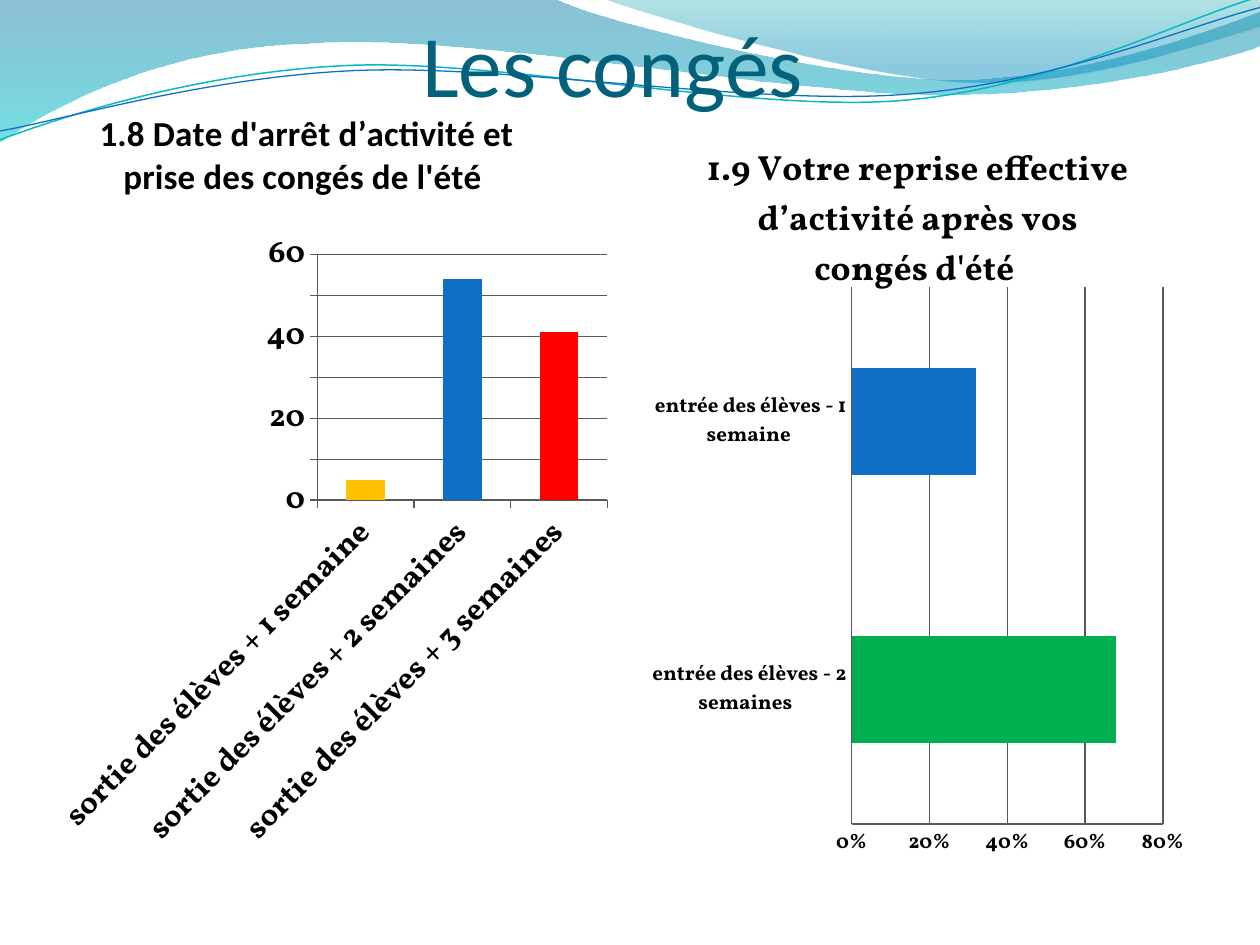
from lxml import etree
from pptx import Presentation
from pptx.chart.data import CategoryChartData
from pptx.dml.color import RGBColor
from pptx.enum.chart import XL_CHART_TYPE, XL_TICK_MARK
from pptx.enum.text import MSO_ANCHOR, MSO_AUTO_SIZE, PP_ALIGN
from pptx.oxml import parse_xml
from pptx.oxml.ns import nsdecls, qn
from pptx.util import Inches, Pt

COLUMN, BAR = XL_CHART_TYPE.COLUMN_CLUSTERED, XL_CHART_TYPE.BAR_CLUSTERED
TICK_OUT, TICK_NONE = XL_TICK_MARK.OUTSIDE, XL_TICK_MARK.NONE
C = {"title": "04617B", "text": "000000", "grid": "595959", "blue": "0F6FC6",
     "teal": "0AB8BF", "yellow": "FFC000", "red": "FF0000", "green": "00B050"}
HEAD, BODY = "Calibri", "Vollkorn"
LEFT_BOX, RIGHT_BOX = (0.28, 0.76, 4.64, 6.19), (5.08, 0.99, 4.42, 5.96)

# A wave is a list of points; a six-number entry is a cubic curve.
LEFT_WAVE = [(0, 0), (4.4, -0.01), (4.76, 0.17, 6.64, 0.63, 7.58, 0.63),
             (8.53, 0.63, 9.58, 0.26, 10, 0.09), (10.01, 0.36),
             (9.83, 0.44, 8.7, 0.76, 7.46, 0.75), (6.22, 0.75, 3.82, 0.28, 2.57, 0.34),
             (1.29, 0.36, 0.46, 0.83, -0.01, 1.13), (0, 0)]
RIGHT_WAVE = [(4.79, -0.01), (5.09, 0.11, 6.82, 0.62, 7.69, 0.65),
              (8.56, 0.69, 9.61, 0.32, 10, 0.21), (10, 0), (4.79, -0.01)]
TEAL_LINE = [(0, 1.11), (0.48, 0.93, 1.58, 0.57, 2.77, 0.52),
             (3.95, 0.47, 5.93, 0.89, 7.13, 0.8), (8.33, 0.71, 9.38, 0.15, 9.98, -0.02)]
BLUE_LINE = [(0, 1.04), (0.47, 0.96, 1.64, 0.61, 2.83, 0.56),
             (4.03, 0.51, 5.97, 0.84, 7.17, 0.75), (8.36, 0.67, 9.41, 0.21, 10, 0.06)]


def rgb(value):
    return RGBColor.from_string(value)


def add_wave(s, wave, closed):
    """Join the end points with lines, then bend the lines that are curves."""
    points = [(Inches(seg[-2]), Inches(seg[-1])) for seg in wave]
    builder = s.shapes.build_freeform(*points[0])
    builder.add_line_segments(points[1:], close=closed)
    sp = builder.convert_to_shape()
    sp.shadow.inherit = False
    lines = list(sp._element.iter(qn("a:lnTo")))
    for line, seg in zip(lines, wave[1:]):
        if len(seg) == 6:
            curve = etree.Element(qn("a:cubicBezTo"))
            for x, y in (seg[:2], seg[2:4], seg[4:]):
                pt = etree.SubElement(curve, qn("a:pt"))
                pt.set("x", str(Inches(x) - sp.left))
                pt.set("y", str(Inches(y) - sp.top))
            line.getparent().replace(line, curve)
    return sp


def add_filled_wave(s, wave, stops):
    """Stops are (position, colour, opacity in percent), from top to bottom."""
    sp = add_wave(s, wave, True)
    sp.line.fill.background()
    sp.fill.gradient()
    sp.fill.gradient_angle = 270
    for stop, (position, color, _) in zip(sp.fill.gradient_stops, stops):
        stop.position = position
        stop.color.rgb = rgb(color)
    for clr, (_, _, opacity) in zip(sp._element.spPr.iter(qn("a:srgbClr")), stops):
        etree.SubElement(clr, qn("a:alpha")).set("val", str(opacity * 1000))


def add_line_wave(s, wave, color, width):
    sp = add_wave(s, wave, False)
    sp.fill.background()
    sp.line.color.rgb = rgb(color)
    sp.line.width = Pt(width)


def set_font(font, size, color, name, bold):
    font.size, font.name, font.bold = Pt(size), name, bold
    font.color.rgb = rgb(color)


def set_title(s, text):
    sp = s.shapes.title
    s.shapes._spTree.append(sp._element)  # in front of the waves
    sp.left, sp.top, sp.width, sp.height = map(Inches, (3.35, -0.34, 9, 1.25))
    tf = sp.text_frame
    tf.auto_size, tf.word_wrap = MSO_AUTO_SIZE.NONE, True
    tf.vertical_anchor = MSO_ANCHOR.BOTTOM
    tf.margin_left = tf.margin_right = tf.margin_bottom = 0
    tf.margin_top = Inches(0.05)
    p = tf.paragraphs[0]
    p.alignment = PP_ALIGN.LEFT
    r = p.add_run()
    r.text = text
    set_font(r.font, 50, C["title"], HEAD, False)


def layout_xml(box, place):
    """Place a chart part, given in inches from the corner of the chart box."""
    target = '<c:layoutTarget val="inner"/>' if len(place) == 4 else ""
    modes = "".join(f'<c:{k}Mode val="edge"/>' for k in "xy")
    values = "".join(f'<c:{k} val="{v / size:.4f}"/>'
                     for k, v, size in zip("xywh", place, box[2:] * 2))
    return parse_xml(f'<c:layout {nsdecls("c")}><c:manualLayout>{target}{modes}{values}'
                     "</c:manualLayout></c:layout>")


def drop_layout(element):
    for old in element.findall(qn("c:layout")):
        element.remove(old)


def set_plot_area(chart, box, place):
    area = chart._chartSpace.chart.plotArea
    drop_layout(area)
    area.insert(0, layout_xml(box, place))


def set_chart_title(chart, text, font_name, box, place):
    title = chart.chart_title
    title.include_in_layout = False
    r = title.text_frame.paragraphs[0].add_run()
    r.text = text
    set_font(r.font, 20, C["text"], font_name, True)
    drop_layout(title._element)
    title._element.find(qn("c:tx")).addnext(layout_xml(box, place))


def style_axis(axis, size, tick):
    axis.major_tick_mark, axis.minor_tick_mark = tick, TICK_NONE
    axis.format.line.color.rgb = rgb(C["grid"])
    axis.format.line.width = Pt(0.75)
    set_font(axis.tick_labels.font, size, C["text"], BODY, True)


def add_bars(s, kind, box, data, colors, size, tick, top, step, number_format):
    """Add a one-series chart with one colour for each bar."""
    cd = CategoryChartData()
    cd.categories = list(data)
    cd.add_series("Series 1", list(data.values()))
    chart = s.shapes.add_chart(kind, *map(Inches, box), cd).chart
    chart.has_legend = False
    set_font(chart.font, size, C["text"], BODY, True)
    plot = chart.plots[0]
    plot.gap_width, plot.vary_by_categories = 150, False
    series = plot.series[0]
    series.format.fill.solid()
    series.format.fill.fore_color.rgb = rgb(C["blue"])
    for i, color in colors.items():
        fill = series.points[i].format.fill
        fill.solid()
        fill.fore_color.rgb = rgb(C[color])
    for axis in (chart.category_axis, chart.value_axis):
        style_axis(axis, size, tick)
    axis = chart.value_axis
    axis.minimum_scale, axis.maximum_scale, axis.major_unit = 0, top, step
    axis.has_major_gridlines = True
    axis.major_gridlines.format.line.color.rgb = rgb(C["grid"])
    axis.major_gridlines.format.line.width = Pt(0.75)
    axis.tick_labels.number_format = number_format
    axis.tick_labels.number_format_is_linked = False
    return chart


def add_departure_chart(s):
    data = {"  sortie des élèves + 1 semaine": 5, "  sortie des élèves + 2 semaines": 54,
            " sortie des élèves + 3 semaines": 41}
    chart = add_bars(s, COLUMN, LEFT_BOX, data, {0: "yellow", 2: "red"},
                     18, TICK_OUT, 60, 10, "General")
    set_chart_title(chart, "1.8 Date d'arrêt d’activité et prise des congés de l'été ",
                    HEAD, LEFT_BOX, (0.46, 0.05))
    set_plot_area(chart, LEFT_BOX, (2.24, 1.26, 2.3, 1.95))
    body = chart.category_axis._element.find(qn("c:txPr")).find(qn("a:bodyPr"))
    body.set("rot", str(-45 * 60000))


def add_return_chart(s):
    data = {"  entrée des élèves - 2 semaines": 0.68, " entrée des élèves - 1 semaine": 0.32}
    chart = add_bars(s, BAR, RIGHT_BOX, data, {0: "green"},
                     12, TICK_NONE, 0.8, 0.2, "0%")
    set_chart_title(chart, "1.9 Votre reprise effective d’activité après vos congés d'été ",
                    BODY, RIGHT_BOX, (0.48, 0.09))
    set_plot_area(chart, RIGHT_BOX, (1.68, 1.29, 2.47, 4.26))


def main():
    prs = Presentation()
    prs.slide_width, prs.slide_height = Inches(10), Inches(7.5)
    s = prs.slides.add_slide(prs.slide_layouts[5])
    add_filled_wave(s, LEFT_WAVE, [(0, "0074A1", 45), (1, "00C6CF", 55)])
    add_filled_wave(s, RIGHT_WAVE, [(0, "00A1A9", 30), (0.8, "008BBF", 45)])
    add_line_wave(s, TEAL_LINE, C["teal"], 0.85)
    add_line_wave(s, BLUE_LINE, C["blue"], 0.75)
    set_title(s, "Les congés")
    add_departure_chart(s)
    add_return_chart(s)
    prs.save("out.pptx")


if __name__ == "__main__":
    main()
